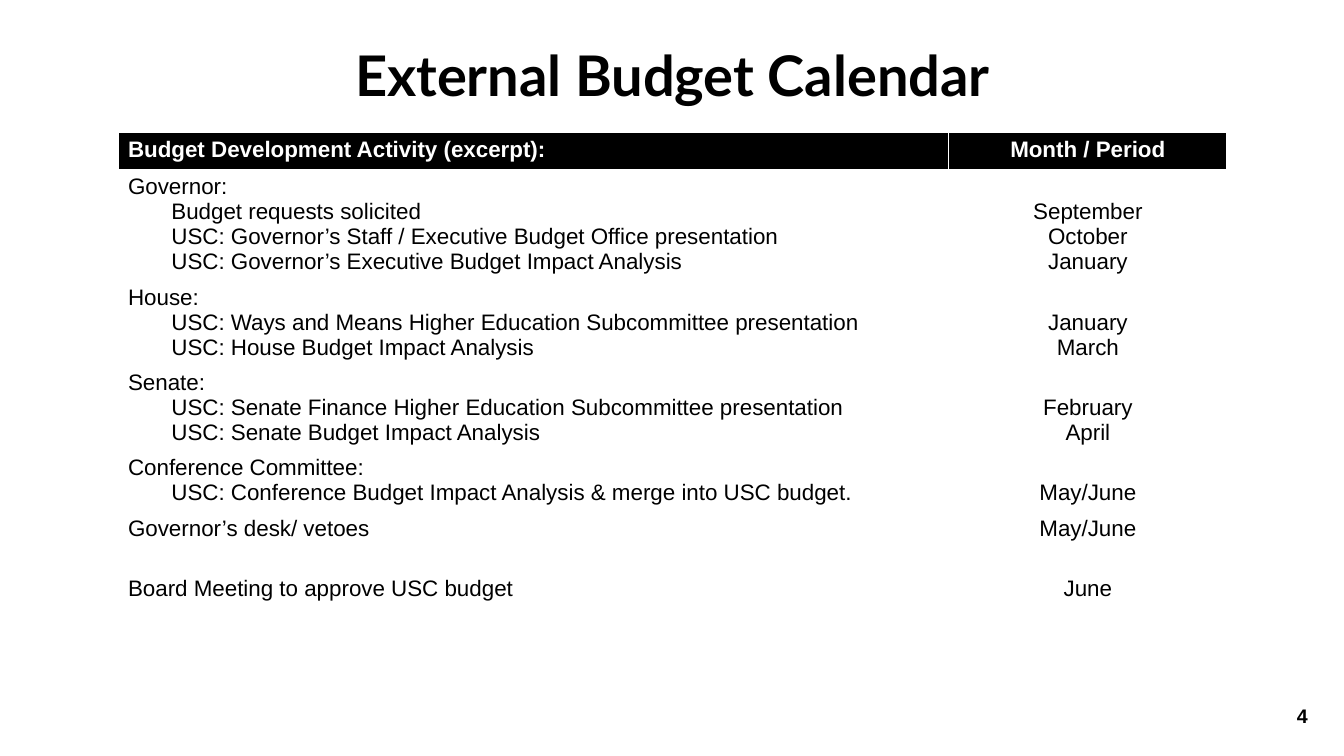
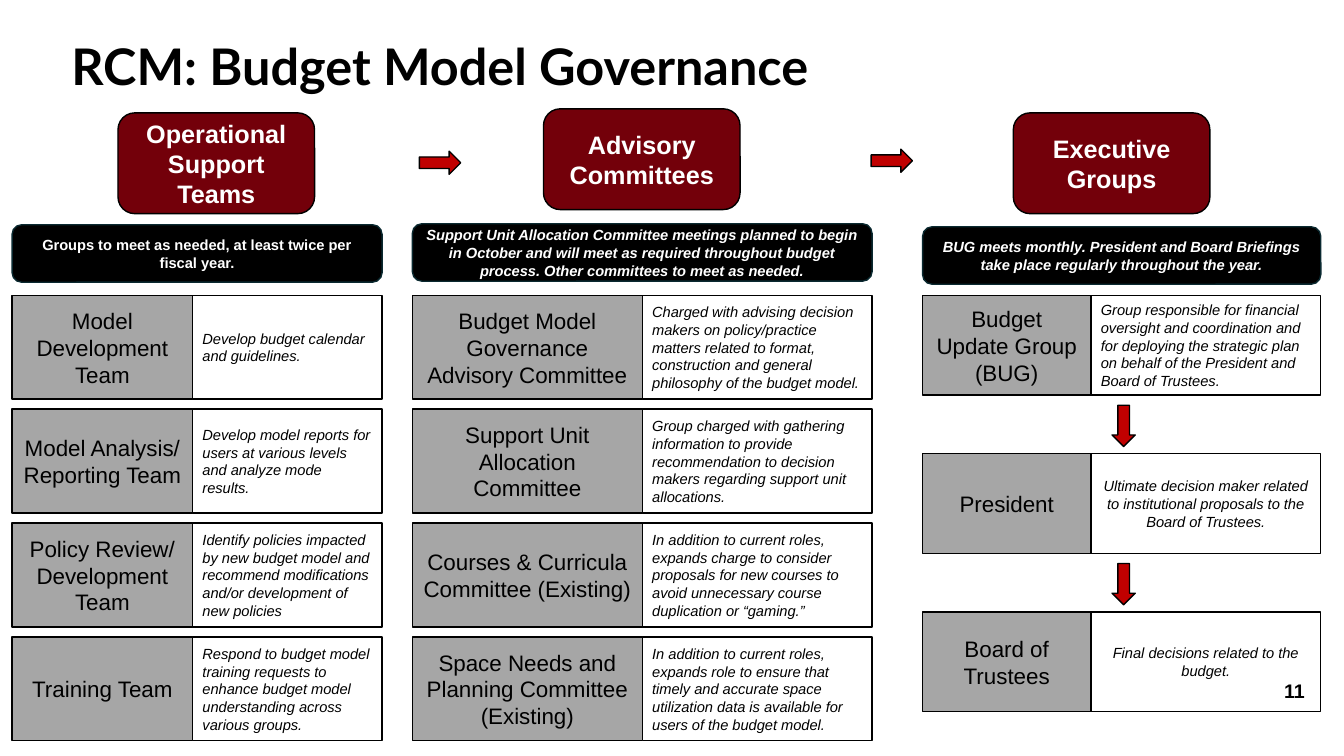
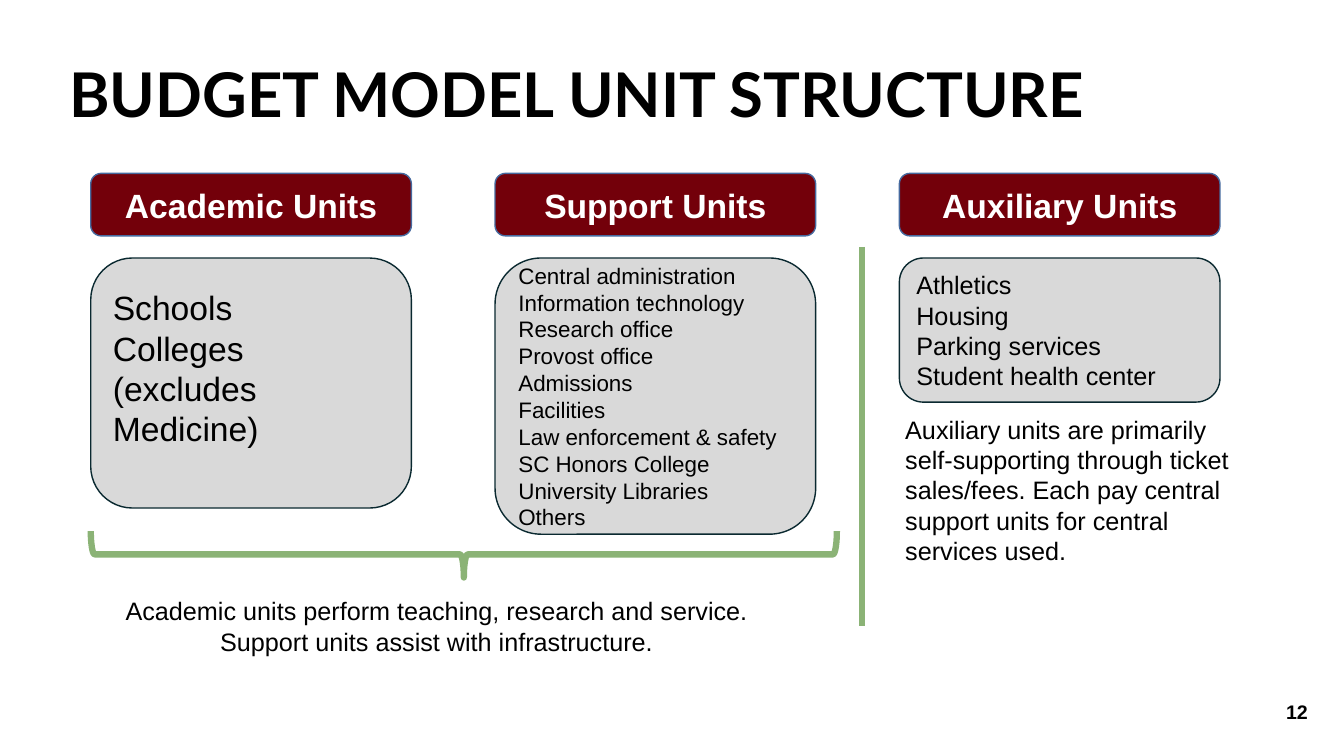
from dataclasses import dataclass

from lxml import etree
from pptx import Presentation
from pptx.dml.color import RGBColor
from pptx.enum.shapes import MSO_CONNECTOR as Connector, MSO_SHAPE as Shape
from pptx.enum.text import MSO_ANCHOR as Anchor, PP_ALIGN as Align
from pptx.oxml.ns import qn
from pptx.util import Inches, Pt

WIDTH, HEIGHT = 13.33, 7.5
COLORS = {
    "black": "000000", "white": "FFFFFF", "garnet": "73000A", "red": "C00000",
    "gray": "A6A6A6", "pale": "D9D9D9", "teal": "0A2930", "blue": "466A9F",
    "green": "8BB376",
}
LEADING = 1.2        # line pitch as a share of the type size
TABLE_LEADING = 1.12
INDENT = 0.43


@dataclass(frozen=True)
class Style:
    size: float
    color: str = "black"
    bold: bool = False
    italic: bool = False
    align: Align = Align.LEFT
    font: str = "Arial"
    leading: float = LEADING

    def font_format(self) -> dict:
        return {"name": self.font, "size": Pt(self.size),
                "bold": self.bold, "italic": self.italic}


@dataclass(frozen=True)
class Look:
    """Outline, fill and border of a shape."""
    shape: Shape
    fill: str | None
    line: str = "black"
    weight: float = 1


@dataclass(frozen=True)
class Activity:
    name: str
    steps: tuple[tuple[str, str], ...] = ()
    month: str = ""
    height: float = 0.84


@dataclass(frozen=True)
class GovernanceColumn:
    head: str
    head_at: tuple[float, float]
    note: str
    note_top: float
    note_italic: bool
    left: float
    name_width: float
    text_width: float
    height: float
    pitch: float
    groups: tuple[tuple[str, str], ...]
    centered_from: int = 99


@dataclass(frozen=True)
class UnitColumn:
    head: str
    units: str
    height: float
    size: float
    bottom_inset: float = 0.05


NUMBER = Style(14, bold=True, align=Align.RIGHT)
HEAD = Style(18, "white", True, align=Align.CENTER)
GROUP_NAME = Style(16, align=Align.CENTER)
BIG_HEAD = Style(24, "white", True, align=Align.CENTER)
CELL = Style(16, leading=TABLE_LEADING)
MONTH = Style(16, align=Align.CENTER, leading=TABLE_LEADING)

HEAD_BOX = Look(Shape.ROUNDED_RECTANGLE, "garnet")
NOTE_BOX = Look(Shape.ROUNDED_RECTANGLE, "black", "teal")
NAME_BOX = Look(Shape.RECTANGLE, "gray")
TEXT_BOX = Look(Shape.RECTANGLE, "white")
UNIT_HEAD = Look(Shape.ROUNDED_RECTANGLE, "garnet", "blue")
UNIT_BOX = Look(Shape.ROUNDED_RECTANGLE, "pale", "teal")
RIGHT_ARROW = Look(Shape.RIGHT_ARROW, "red")
DOWN_ARROW = Look(Shape.DOWN_ARROW, "red")
BRACE = Look(Shape.RIGHT_BRACE, None, "green", 4.5)

ACTIVITIES = (
    Activity("Governor:", (
        ("Budget requests solicited", "September"),
        ("USC: Governor’s Staff / Executive Budget Office presentation", "October"),
        ("USC: Governor’s Executive Budget Impact Analysis", "January")), height=1.09),
    Activity("House:", (
        ("USC: Ways and Means Higher Education Subcommittee presentation", "January"),
        ("USC: House Budget Impact Analysis", "March"))),
    Activity("Senate:", (
        ("USC: Senate Finance Higher Education Subcommittee presentation", "February"),
        ("USC: Senate Budget Impact Analysis", "April"))),
    Activity("Conference Committee:", (
        ("USC: Conference Budget Impact Analysis & merge into USC budget.", "May/June"),),
        height=0.59),
    Activity("Governor’s desk/ vetoes", month="May/June", height=0.6),
    Activity("Board Meeting to approve USC budget", month="June", height=0.46),
)

GOVERNANCE = (
    GovernanceColumn(
        "Operational Support Teams", (1.17, 1.12),
        "Groups to meet as needed, at least twice per fiscal year.", 2.23, False,
        0.12, 1.79, 1.88, 1.03, 1.13, (
            ("Model Development Team", "Develop budget calendar and guidelines."),
            ("Model Analysis/ Reporting Team",
             "Develop model reports for users at various levels and analyze mode results."),
            ("Policy Review/\nDevelopment Team",
             "Identify policies impacted by new budget model and recommend "
             "modifications and/or development of new policies"),
            ("Training Team",
             "Respond to budget model training requests to enhance budget model "
             "understanding across various groups."))),
    GovernanceColumn(
        "Advisory Committees", (5.39, 1.08),
        "Support Unit Allocation Committee meetings planned to begin in October and "
        "will meet as required throughout budget process. Other committees to meet "
        "as needed.", 2.22, True,
        4.09, 2.28, 2.28, 1.03, 1.13, (
            ("Budget Model Governance Advisory Committee",
             "Charged with advising decision makers on policy/practice matters related "
             "to format, construction and general philosophy of the budget model."),
            ("Support Unit Allocation Committee",
             "Group charged with gathering information to provide recommendation to "
             "decision makers regarding support unit allocations."),
            ("Courses & Curricula Committee (Existing)",
             "In addition to current roles, expands charge to consider proposals for "
             "new courses to avoid unnecessary course duplication or “gaming.”"),
            ("Space Needs and Planning Committee (Existing)",
             "In addition to current roles, expands role to ensure that timely and "
             "accurate space utilization data is available for users of the budget "
             "model."))),
    GovernanceColumn(
        "Executive Groups", (10.05, 1.12),
        "BUG meets monthly. President and Board Briefings take place regularly "
        "throughout the year.", 2.25, True,
        9.15, 1.67, 2.28, 0.99, 1.57, (
            ("Budget Update Group (BUG)",
             "Group responsible for financial oversight and coordination and for "
             "deploying the strategic plan on behalf of the President and Board of "
             "Trustees."),
            ("President",
             "Ultimate decision maker related to institutional proposals to the Board "
             "of Trustees."),
            ("Board of Trustees", "Final decisions related to the budget.")),
        centered_from=1),
)

UNITS = (
    UnitColumn("Academic Units", "Schools\nColleges\n(excludes Medicine)", 2.48, 24, 0.35),
    UnitColumn("Support Units",
               "Central administration\nInformation technology\nResearch office\n"
               "Provost office\nAdmissions\nFacilities\nLaw enforcement & safety\n"
               "SC Honors College\nUniversity Libraries\nOthers", 2.74, 16),
    UnitColumn("Auxiliary Units",
               "Athletics\nHousing\nParking services\nStudent health center", 1.43, 18),
)


def rgb(name: str) -> RGBColor:
    return RGBColor.from_string(COLORS[name])


def write(tf, text: str, style: Style) -> None:
    """Fill a text frame, one paragraph for each line of text."""
    tf.word_wrap = True
    for i, line in enumerate(text.split("\n")):
        p = tf.add_paragraph() if i else tf.paragraphs[0]
        p.alignment = style.align
        # A share below 1 is relative spacing; otherwise the pitch is exact.
        p.line_spacing = style.leading if style.leading < 1 else Pt(style.size * style.leading)
        r = p.add_run()
        r.text = line
        for key, value in style.font_format().items():
            setattr(r.font, key, value)
        r.font.color.rgb = rgb(style.color)


def add_text(s, at: tuple, text: str, style: Style, anchor: Anchor = Anchor.TOP) -> None:
    tf = s.shapes.add_textbox(*map(Inches, at)).text_frame
    tf.vertical_anchor = anchor
    write(tf, text, style)


def add_box(s, at: tuple, look: Look, text: str = "", style: Style = HEAD):
    sp = s.shapes.add_shape(look.shape, *map(Inches, at))
    sp.shadow.inherit = False
    if look.fill:
        sp.fill.solid()
        sp.fill.fore_color.rgb = rgb(look.fill)
    else:
        sp.fill.background()
    sp.line.color.rgb = rgb(look.line)
    sp.line.width = Pt(look.weight)
    if text:
        sp.text_frame.vertical_anchor = Anchor.MIDDLE
        write(sp.text_frame, text, style)
    return sp


def new_slide(prs, title: str, at: tuple, size: float, align: Align = Align.LEFT):
    s = prs.slides.add_slide(prs.slide_layouts[6])
    add_text(s, (*at, 11.5, 0.63), title,
             Style(size, bold=True, align=align, font="Lato", leading=0.9))
    return s


def add_number(s, number: int, left: float, top: float) -> None:
    add_text(s, (left, top, 3, 0.4), str(number), NUMBER, Anchor.MIDDLE)


def fill_cell(cell, text: str, style: Style, fill: str, anchor: Anchor = Anchor.TOP) -> None:
    cell.fill.solid()
    cell.fill.fore_color.rgb = rgb(fill)
    cell.vertical_anchor = anchor
    write(cell.text_frame, text, style)


def calendar_slide(prs) -> None:
    s = new_slide(prs, "External Budget Calendar", (0.92, 0.43), 40, Align.CENTER)
    heights = [0.37, *(a.height for a in ACTIVITIES)]
    frame = s.shapes.add_table(len(heights), 2, *map(Inches, (1.17, 1.31, 11, sum(heights))))
    table = frame.table
    table.horz_banding = False
    for col, width in zip(table.columns, (8.24, 2.76)):
        col.width = Inches(width)
    for row, height in zip(table.rows, heights):
        row.height = Inches(height)
    heads = (("Budget Development Activity (excerpt):", Align.LEFT),
             ("Month / Period", Align.CENTER))
    for c, (text, align) in enumerate(heads):
        fill_cell(table.cell(0, c), text,
                  Style(16, "white", True, align=align, leading=TABLE_LEADING), "black")
    for i, a in enumerate(ACTIVITIES, 1):
        name, month = table.cell(i, 0), table.cell(i, 1)
        fill_cell(name, "\n".join([a.name, *(step for step, _ in a.steps)]), CELL, "white")
        for p in name.text_frame.paragraphs[1:]:
            p._p.get_or_add_pPr().set("marL", str(Inches(INDENT)))
        months = "\n".join(when for _, when in a.steps) or a.month
        fill_cell(month, months, MONTH, "white", Anchor.BOTTOM if a.steps else Anchor.TOP)
    add_number(s, 4, 10.07, 6.9)


def governance_slide(prs) -> None:
    s = new_slide(prs, "RCM: Budget Model Governance", (0.61, 0.37), 36)
    first_row = 2.93
    for col in GOVERNANCE:
        add_box(s, (*col.head_at, 1.95, 1), HEAD_BOX, col.head, HEAD)
        add_box(s, (col.left, col.note_top, col.name_width + col.text_width, 0.57), NOTE_BOX,
                col.note, Style(10.5, "white", True, col.note_italic, Align.CENTER))
        for i, (name, text) in enumerate(col.groups):
            top = first_row + i * col.pitch
            align = Align.CENTER if i >= col.centered_from else Align.LEFT
            add_box(s, (col.left, top, col.name_width, col.height), NAME_BOX, name, GROUP_NAME)
            add_box(s, (col.left + col.name_width, top, col.text_width, col.height), TEXT_BOX,
                    text, Style(10.5, italic=True, align=align))
    executive = GOVERNANCE[-1]
    for i in range(len(executive.groups) - 1):
        top = first_row + executive.height + 0.1 + i * executive.pitch
        add_box(s, (11.03, top, 0.23, 0.41), DOWN_ARROW)
    for left, top in ((4.16, 1.5), (8.64, 1.48)):
        add_box(s, (left, top, 0.41, 0.23), RIGHT_ARROW)
    add_number(s, 11, 10.04, 6.65)


def units_slide(prs) -> None:
    s = new_slide(prs, "BUDGET MODEL UNIT STRUCTURE", (0.59, 0.59), 44)
    for i, col in enumerate(UNITS):
        left = 0.9 + i * 4.01
        add_box(s, (left, 1.72, 3.18, 0.62), UNIT_HEAD, col.head, BIG_HEAD)
        sp = add_box(s, (left, 2.56, 3.18, col.height), UNIT_BOX, col.units, Style(col.size))
        sp.text_frame.margin_bottom = Inches(col.bottom_inset)
    add_box(s, (4.37, 1.8, 0.46, 7.4), BRACE).rotation = 90
    add_text(s, (0.32, 5.86, 8.02, 0.71),
             "Academic units perform teaching, research and service.\n"
             "Support units assist with infrastructure.", Style(18, align=Align.CENTER))
    divider = s.shapes.add_connector(Connector.STRAIGHT, *map(Inches, (8.55, 2.45, 8.55, 6.21)))
    divider.line.color.rgb = rgb("green")
    divider.line.width = Pt(4.5)
    etree.SubElement(divider._element.spPr, qn("a:effectLst"))
    add_text(s, (8.88, 4.06, 3.56, 1.62),
             "Auxiliary units are primarily self-supporting through ticket sales/fees. "
             "Each pay central support units for central services used.", Style(18))
    add_number(s, 12, 10.07, 6.86)


def main() -> None:
    prs = Presentation()
    prs.slide_width, prs.slide_height = Inches(WIDTH), Inches(HEIGHT)
    for build in (calendar_slide, governance_slide, units_slide):
        build(prs)
    prs.save("out.pptx")


if __name__ == "__main__":
    main()
